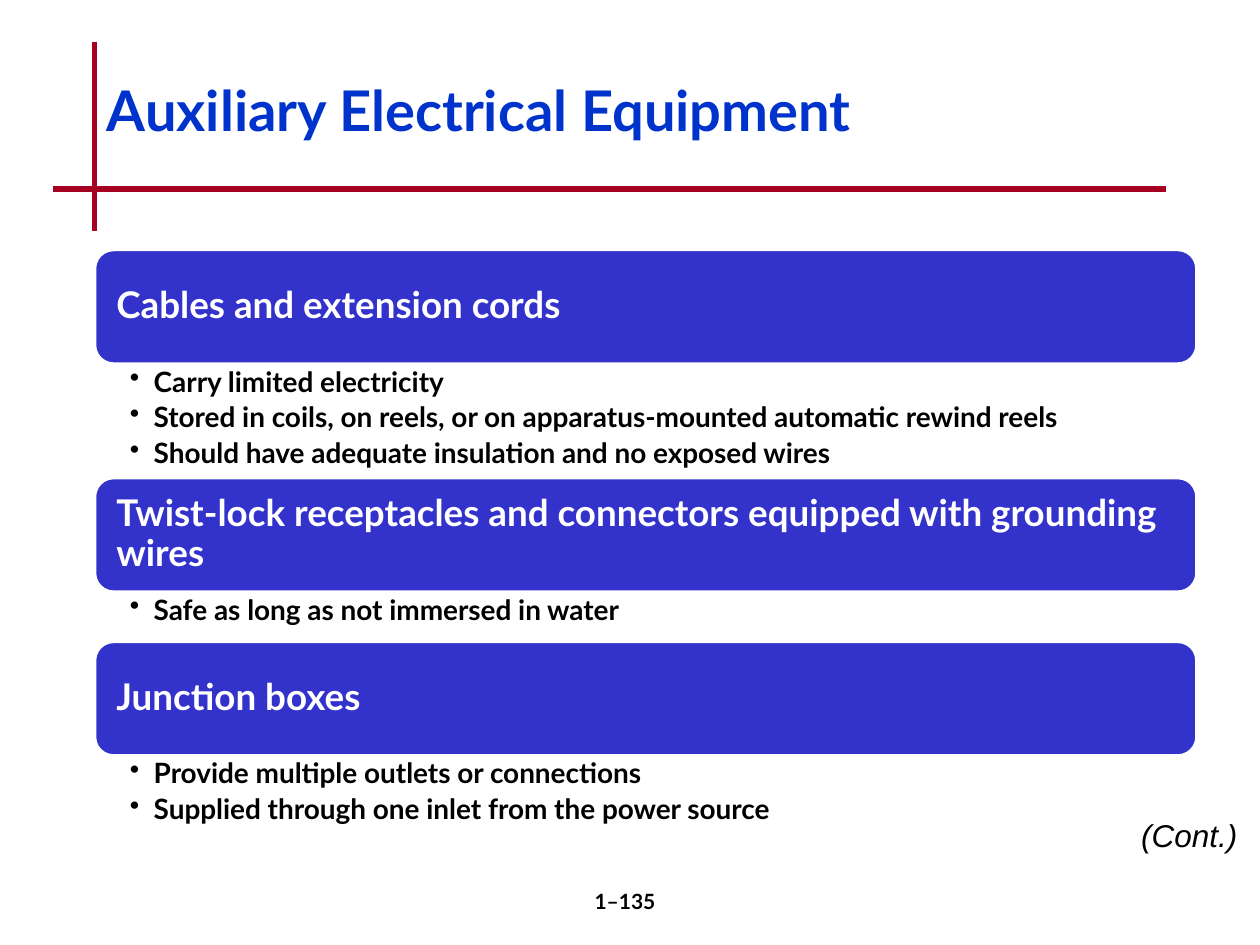
from lxml import etree
from pptx import Presentation
from pptx.dml.color import RGBColor
from pptx.enum import shapes, text
from pptx.oxml.ns import qn
from pptx.util import Inches, Pt

# Content
TITLE = "Auxiliary Electrical Equipment"
PAGE_NUMBER = "1–135"
CONTINUED = "(Cont.)"
# heading, bullets, height of the bullet area in inches
SECTIONS = [
    ("Cables and extension cords",
     ["Carry limited electricity",
      "Stored in coils, on reels, or on apparatus-mounted automatic rewind reels",
      "Should have adequate insulation and no exposed wires"], 0.9),
    ("Twist-lock receptacles and connectors equipped with grounding wires",
     ["Safe as long as not immersed in water"], 0.39),
    ("Junction boxes",
     ["Provide multiple outlets or connections",
      "Supplied through one inlet from the power source"], 0.61),
]
RULES = [(0.75, 0.33, 0.75, 1.83), (0.42, 1.5, 9.25, 1.5)]

THEME = {
    "font": "Lato", "aside_font": "Arial",
    "title": "0033CC", "rule": "A50021", "bar": "3333CC",
    "light": "FFFFFF", "dark": "000000",
    "title_size": 32, "heading_size": 21, "bullet_size": 16,
    "aside_size": 18, "page_size": 12,
}
LEFT, WIDTH, TOP, BAR_HEIGHT = 0.75, 8.75, 1.98, 0.91
ALIGN, ANCHOR = text.PP_ALIGN, text.MSO_ANCHOR


def color(name):
    return RGBColor.from_string(THEME[name])


def set_frame(frame, insets=(0.1, 0.05, 0.1, 0.05), anchor=ANCHOR.TOP):
    frame.word_wrap = True
    frame.vertical_anchor = anchor
    (frame.margin_left, frame.margin_top,
     frame.margin_right, frame.margin_bottom) = map(Inches, insets)


def style(paragraph, size, ink="dark", align=ALIGN.LEFT, spacing=1.0,
          face="font", bold=True, italic=False):
    paragraph.alignment = align
    paragraph.line_spacing = spacing
    font = paragraph.font
    font.name, font.size = THEME[face], Pt(THEME[size])
    font.bold, font.italic = bold, italic
    font.color.rgb = color(ink)


def add_label(slide, box, words, size, anchor=ANCHOR.TOP, **look):
    frame = slide.shapes.add_textbox(*map(Inches, box)).text_frame
    set_frame(frame, anchor=anchor)
    frame.text = words
    style(frame.paragraphs[0], size, **look)


def add_rule(slide, ends):
    rule = slide.shapes.add_connector(shapes.MSO_CONNECTOR.STRAIGHT, *map(Inches, ends))
    rule.line.color.rgb = color("rule")
    rule.line.width = Pt(3)
    etree.SubElement(rule._element.spPr, qn("a:effectLst"))


def add_heading(slide, top, words):
    bar = slide.shapes.add_shape(
        shapes.MSO_SHAPE.ROUNDED_RECTANGLE,
        *map(Inches, (LEFT, top, WIDTH, BAR_HEIGHT)))
    bar.shadow.inherit = False
    bar.fill.solid()
    bar.fill.fore_color.rgb = color("bar")
    bar.line.color.rgb = color("light")
    bar.line.width = Pt(2)
    set_frame(bar.text_frame, (0.13,) * 4, ANCHOR.MIDDLE)
    bar.text_frame.text = words
    style(bar.text_frame.paragraphs[0], "heading_size", "light", spacing=0.9)


def add_bullets(slide, top, height, bullets):
    frame = slide.shapes.add_textbox(*map(Inches, (LEFT, top, WIDTH, height))).text_frame
    set_frame(frame, (0.28, 0.03, 0.16, 0.03))
    frame.text = "\n".join(bullets)
    for paragraph in frame.paragraphs:
        properties = paragraph._p.get_or_add_pPr()
        properties.set("marL", str(Inches(0.19)))
        properties.set("indent", str(Inches(-0.19)))
        etree.SubElement(properties, qn("a:buChar"), char="•")
        style(paragraph, "bullet_size", spacing=0.9)
        paragraph.space_after = Pt(0.2 * THEME["bullet_size"])


def main():
    deck = Presentation()
    deck.slide_width, deck.slide_height = Inches(10), Inches(7.5)
    slide = deck.slides.add_slide(deck.slide_layouts[6])

    # Crossed rules, page number and title
    for ends in RULES:
        add_rule(slide, ends)
    add_label(slide, (3.92, 7, 2.08, 0.5), PAGE_NUMBER, "page_size", align=ALIGN.CENTER)
    add_label(slide, (0.75, 0.33, 8.5, 1.17), TITLE, "title_size",
              anchor=ANCHOR.MIDDLE, ink="title", spacing=0.8)

    # Sections stacked down the slide
    top = TOP
    for heading, bullets, height in SECTIONS:
        add_heading(slide, top, heading)
        add_bullets(slide, top + BAR_HEIGHT, height, bullets)
        top += BAR_HEIGHT + height

    # Continuation note
    add_label(slide, (8.25, 6.43, 1.67, 0.4), CONTINUED, "aside_size",
              align=ALIGN.RIGHT, face="aside_font", bold=False, italic=True)

    deck.save("out.pptx")


if __name__ == "__main__":
    main()
